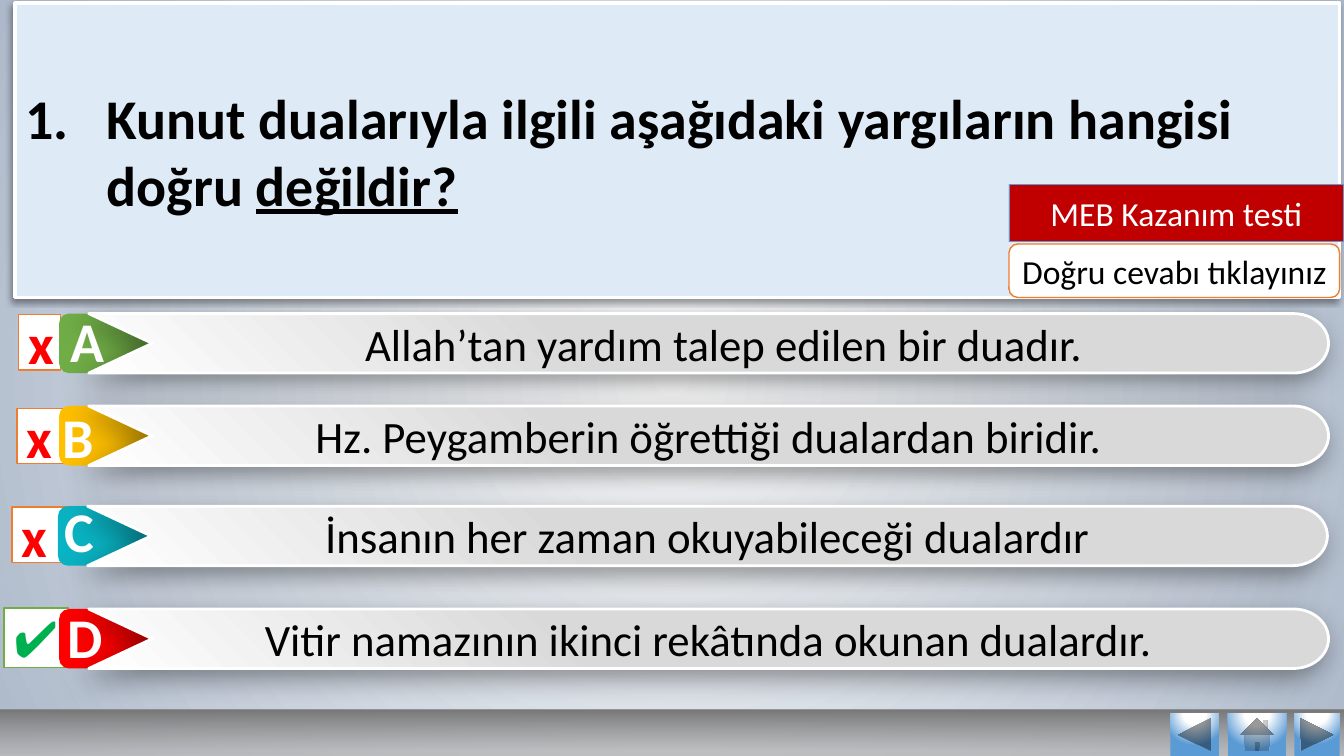
from math import cos, pi, sin

from lxml import etree
from pptx import Presentation
from pptx.dml.color import RGBColor
from pptx.enum.shapes import MSO_SHAPE
from pptx.enum.text import MSO_ANCHOR, PP_ALIGN
from pptx.oxml.ns import qn
from pptx.util import Pt

RECT = MSO_SHAPE.RECTANGLE
ROUND = MSO_SHAPE.ROUNDED_RECTANGLE
BACK = MSO_SHAPE.ACTION_BUTTON_BACK_OR_PREVIOUS
NEXT = MSO_SHAPE.ACTION_BUTTON_FORWARD_OR_NEXT
HOME = MSO_SHAPE.ACTION_BUTTON_HOME
LEFT, CENTER = PP_ALIGN.LEFT, PP_ALIGN.CENTER
TOP, MIDDLE = MSO_ANCHOR.TOP, MSO_ANCHOR.MIDDLE

WIDE, HIGH = 960, 540
BAR = 42.5
ORANGE = "ED7D31"
GLOSS = [(0, "FFFFFF"), (35, "FFFFFF"), (100, "5B9BD5")]
SILVER = [(0, "FFFFFF"), (40, "D9D9D9"), (100, "D9D9D9")]

# letter, colour, bar left and top, mark, mark box, letter centre and top, text
ROWS = [
    ("A", "70AD47", 63.4, 224, "x", (13, 224.6, 30.2, 39.6), (62.3, 215.3),
     "Allah’tan yardım talep edilen bir duadır."),
    ("B", "FFC000", 63.4, 290, "x", (12.2, 291.6, 39.6, 39.6), (55.8, 283.7),
     "Hz. Peygamberin öğrettiği dualardan biridir."),
    ("C", "0AB3C3", 62.6, 361.6, "x", (8.6, 362.2, 39.6, 39.6), (56.5, 351.4),
     "İnsanın her zaman okuyabileceği dualardır"),
    ("D", "FF0000", 63.4, 435, "✔", (2.9, 434.2, 46, 42.5), (60.8, 427),
     "Vitir namazının ikinci rekâtında okunan dualardır."),
]


def color(code):
    return RGBColor.from_string(code)


def add(parent, tag, **attrs):
    node = etree.SubElement(parent, qn(tag))
    for key, value in attrs.items():
        node.set(key, str(value))
    return node


def grad(fill, holder, stops, angle=None, focus=None):
    """Give the holder a linear (clockwise angle) or circular gradient."""
    fill.background()
    node = etree.Element(qn("a:gradFill"), rotWithShape="1")
    items = add(node, "a:gsLst")
    for spot, code, *alpha in stops:
        stop = add(items, "a:gs", pos=spot * 1000)
        tint = add(stop, "a:srgbClr", val=code)
        for part in alpha:
            add(tint, "a:alpha", val=part * 1000)
    if focus:
        round_path = add(node, "a:path", **{"path": "circle"})
        sides = {side: part * 1000 for side, part in zip("ltrb", focus)}
        add(round_path, "a:fillToRect", **sides)
    else:
        add(node, "a:lin", ang=angle * 60000, scaled=0)
    old = holder.find(qn("a:noFill"))
    holder.replace(old, node)


def style(shape, fill=None, line=None, width=1):
    shape.shadow.inherit = False
    if fill:
        shape.fill.solid()
        shape.fill.fore_color.rgb = color(fill)
    if line:
        shape.line.color.rgb = color(line)
        shape.line.width = Pt(width)
    else:
        shape.line.fill.background()


def shade(shape, blur, dist):
    """Cast a soft black shadow down and to the left."""
    effects = shape._element.spPr.find(qn("a:effectLst"))
    cast = add(effects, "a:outerShdw", blurRad=Pt(blur), dist=Pt(dist),
               dir=135 * 60000, algn="tr", rotWithShape=0)
    add(add(cast, "a:srgbClr", val="000000"), "a:alpha", val=40000)


def block(slide, kind, box, **look):
    shape = slide.shapes.add_shape(kind, *map(Pt, box))
    style(shape, **look)
    return shape


def write(shape, *parts, size=24, ink="000000", bold=False, align=CENTER,
          anchor=MIDDLE):
    """Write the parts as one paragraph; every part after the first is underlined."""
    frame = shape.text_frame
    frame.word_wrap = True
    frame.vertical_anchor = anchor
    para = frame.paragraphs[0]
    para.alignment = align
    for index, part in enumerate(parts):
        run = para.add_run()
        run.text = part
        font = run.font
        font.name, font.size, font.bold = "Calibri", Pt(size), bold
        font.color.rgb = color(ink)
        if index:
            font.underline = True
    return para


def question(slide, box):
    panel = block(slide, RECT, box, fill="DEEBF7", line="FFFFFF", width=2.5)
    shade(panel, 4, 3)
    para = write(panel, "Kunut dualarıyla ilgili aşağıdaki yargıların hangisi doğru ",
                 "değildir?", size=40, bold=True, align=LEFT)
    para.space_before = Pt(10)
    props = para._p.get_or_add_pPr()
    props.set("marL", str(Pt(58.3)))
    props.set("indent", str(-Pt(58.3)))
    add(props, "a:buFont", typeface="+mj-lt")
    add(props, "a:buAutoNum", type="arabicPeriod")


def mark(slide, sign, box):
    good = sign == "✔"
    shape = block(slide, RECT, box, fill="FFFFFF", line="70AD47" if good else ORANGE)
    write(shape, sign, size=36 if good else 40, bold=not good, align=LEFT,
          ink="00B050" if good else "FF0000")


def bar(slide, left, top, wide):
    """Draw a bar with a notch at its left and a round right end."""
    half, bend = BAR / 2, 25
    mid = top + half
    turns = [pi * (step / 24 - 0.5) for step in range(25)]
    edge = [(left + wide - bend + bend * cos(turn), mid + half * sin(turn))
            for turn in turns]
    dots = edge + [(left, top + BAR), (left + 45.4, mid)]
    pen = slide.shapes.build_freeform(Pt(left), Pt(top))
    pen.add_line_segments([(Pt(x), Pt(y)) for x, y in dots], close=True)
    shape = pen.convert_to_shape()
    style(shape, line="FFFFFF", width=2)
    grad(shape.fill, shape._element.spPr, SILVER, angle=315)
    shade(shape, 20, 7)
    return shape


def answer(slide, letter, hue, left, top, spot, text):
    block(slide, ROUND, (left - 21.2, top, 94.3, BAR), fill=hue)
    strip = bar(slide, left, top, 885.6)
    write(strip, text, size=32)
    if letter == "A":
        strip.text_frame.margin_left = Pt(29)
    mid, head = spot
    label = slide.shapes.add_textbox(Pt(mid - 28.4), Pt(head), Pt(56.8), Pt(55.4))
    write(label, letter, size=40, ink="FEFEFE", bold=True, anchor=TOP)


def footer(slide, top):
    band = block(slide, RECT, (0, top, WIDE, 35.3))
    tones = [(0, "C0C0C0"), (17, "B3B3B3", 70), (100, "777777")]
    grad(band.fill, band._element.spPr, tones, angle=270)
    for kind, left, wide in [(BACK, 836, 34.6), (NEXT, 924.5, 32.4), (HOME, 877, 41.8)]:
        button = block(slide, kind, (left, top + 2.5, wide, 31))
        grad(button.fill, button._element.spPr, GLOSS, focus=(50, -80, 50, 180))


def badges(slide, left, top):
    hint = block(slide, ROUND, (left, top + 42.5, 236.2, 38.2), fill="FFFFFF", line=ORANGE)
    write(hint, "Doğru cevabı tıklayınız")
    test = block(slide, RECT, (left, top, 239, 41), fill="C00000", line="5B9BD5", width=0.5)
    write(test, "MEB Kazanım testi", ink="FFFFFF")


def main():
    deck = Presentation()
    deck.slide_width, deck.slide_height = Pt(WIDE), Pt(HIGH)
    slide = deck.slides.add_slide(deck.slide_layouts[6])
    fill = slide.background.fill
    fill.background()
    holder = slide._element.cSld.find(qn("p:bg")).find(qn("p:bgPr"))
    grad(fill, holder, [(0, "FFFFFF"), (100, "ADB9CA")], focus=(50, 50, 50, 50))
    for row in ROWS:
        mark(slide, row[4], row[5])
    question(slide, (10.8, 2.2, 946, 210.2))
    for letter, hue, left, top, _, _, spot, text in ROWS:
        answer(slide, letter, hue, left, top, spot, text)
    footer(slide, 506.9)
    badges(slide, 720.7, 131.8)
    deck.save("out.pptx")


if __name__ == "__main__":
    main()
